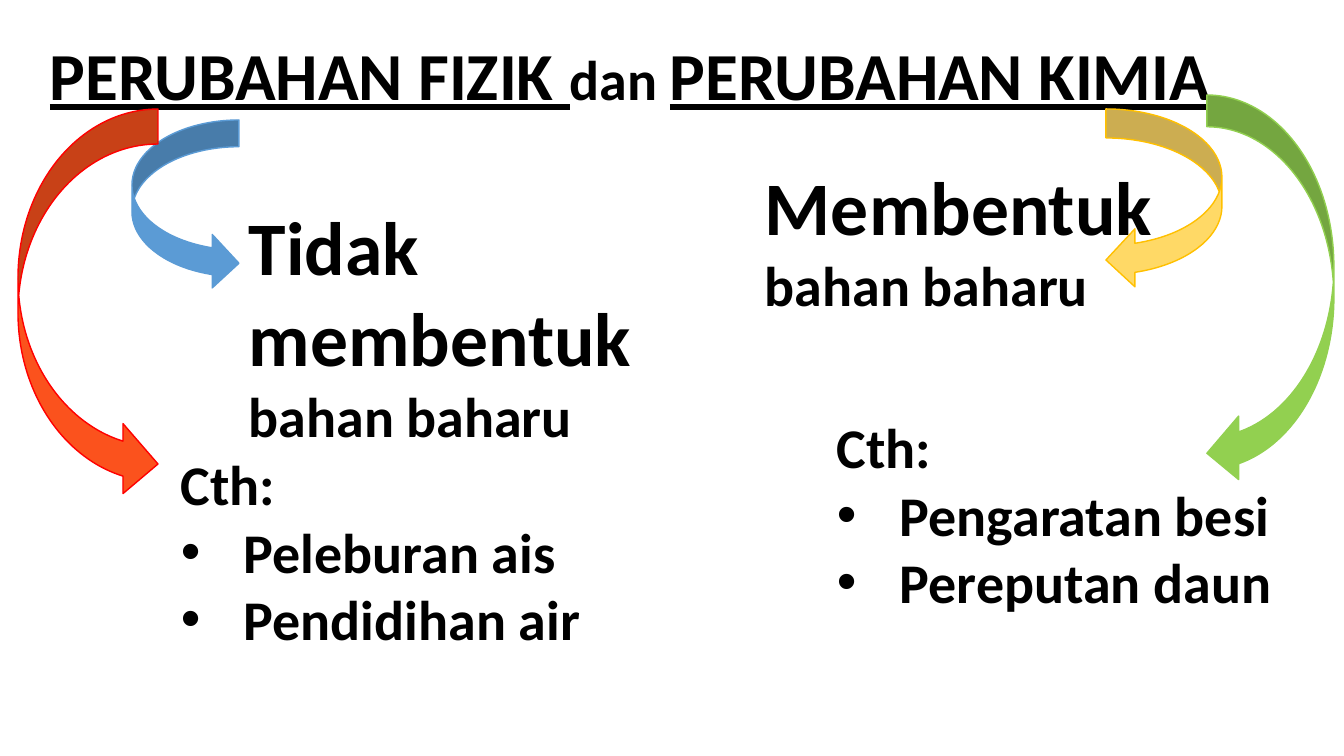
import pptx
import pptx.dml.color
import pptx.enum.shapes
import pptx.enum.text
import pptx.oxml
import pptx.oxml.ns
import pptx.util

# Content: boxes are (left, top, width, height) in px
SLIDE_SIZE = (1344, 756)

TITLE_BOX = (40, 28, 1195, 92)
TITLE = [
    ("PERUBAHAN FIZIK ", "title", True),
    ("dan ", "body", False),
    ("PERUBAHAN KIMIA", "title", True),
]

DEFINITIONS = [
    ((239, 195, 415, 261), "Tidak membentuk "),
    ((755, 155, 431, 169), "Membentuk "),
]
DEFINITION_END = "bahan baharu"

EXAMPLES_HEADING = "Cth:"
EXAMPLES = [
    ((171, 445, 425, 214), ["Peleburan ais", "Pendidihan air"]),
    ((827, 408, 470, 214), ["Pengaratan besi", "Pereputan daun"]),
]
BULLET_INDENT = 63

# Box, colour name, mirrored
ARROWS = [
    ((132, 120, 107, 170), "blue", False),
    ((18, 109, 140, 390), "red", False),
    ((1106, 109, 116, 180), "yellow", True),
    ((1207, 95, 127, 390), "green", True),
]

THEME = {
    "font": "Calibri",
    "text": "000000",
    "sizes": {"title": 48, "lead": 54, "body": 40},
    "arrows": {  # fill, line
        "blue": ("5B9BD5", "5B9BD5"),
        "red": ("FB521D", "FF0000"),
        "yellow": ("FFD966", "FFC000"),
        "green": ("92D050", "92D050"),
    },
    "line": 1,
}

EMU_PER_PX = 914400 / 100.8


def px(length):
    return pptx.util.Emu(round(length * EMU_PER_PX))


def rgb(colour):
    return pptx.dml.color.RGBColor.from_string(colour)


def add_text(slide, box, wrap=True):
    frame = slide.shapes.add_textbox(*map(px, box)).text_frame
    frame.word_wrap = wrap
    return frame


def style(paragraph, size="body"):
    paragraph.font.name = THEME["font"]
    paragraph.font.size = pptx.util.Pt(THEME["sizes"][size])
    paragraph.font.bold = True
    paragraph.font.color.rgb = rgb(THEME["text"])


def add_runs(paragraph, runs):
    style(paragraph)
    for text, size, underlined in runs:
        run = paragraph.add_run()
        run.text = text
        run.font.size = pptx.util.Pt(THEME["sizes"][size])
        if underlined:
            run.font.underline = True


def add_bullet(paragraph):
    properties = paragraph._p.get_or_add_pPr()
    properties.set("marL", str(px(BULLET_INDENT)))
    properties.set("indent", str(-px(BULLET_INDENT)))
    namespace = pptx.oxml.ns.nsdecls("a")
    for tag in ('buFont %s typeface="Arial"', 'buChar %s char="•"'):
        properties.append(pptx.oxml.parse_xml(f"<a:{tag % namespace}/>"))


def add_arrow(slide, box, colour, mirrored):
    arrow = slide.shapes.add_shape(
        pptx.enum.shapes.MSO_SHAPE.CURVED_RIGHT_ARROW, *map(px, box))
    fill, line = THEME["arrows"][colour]
    arrow.shadow.inherit = False
    arrow.fill.solid()
    arrow.fill.fore_color.rgb = rgb(fill)
    arrow.line.color.rgb = rgb(line)
    arrow.line.width = pptx.util.Pt(THEME["line"])
    if mirrored:
        arrow._element.spPr.xfrm.set("flipH", "1")


def add_examples(slide, box, examples):
    frame = add_text(slide, box)
    heading = frame.paragraphs[0]
    heading.text = EXAMPLES_HEADING
    style(heading)
    for example in examples:
        item = frame.add_paragraph()
        item.text = example
        add_bullet(item)
        style(item)


def main():
    deck = pptx.Presentation()
    deck.slide_width, deck.slide_height = map(px, SLIDE_SIZE)
    slide = deck.slides.add_slide(deck.slide_layouts[6])

    # Title
    title = add_text(slide, TITLE_BOX, wrap=False)
    add_runs(title.paragraphs[0], TITLE)

    # Definitions of the two changes
    for box, lead in DEFINITIONS:
        definition = add_text(slide, box)
        add_runs(definition.paragraphs[0],
                 [(lead, "lead", False), (DEFINITION_END, "body", False)])

    # Arrows from the title to each definition and its examples
    for box, colour, mirrored in ARROWS:
        add_arrow(slide, box, colour, mirrored)

    # Examples
    for box, examples in EXAMPLES:
        add_examples(slide, box, examples)

    deck.save("out.pptx")


if __name__ == "__main__":
    main()
